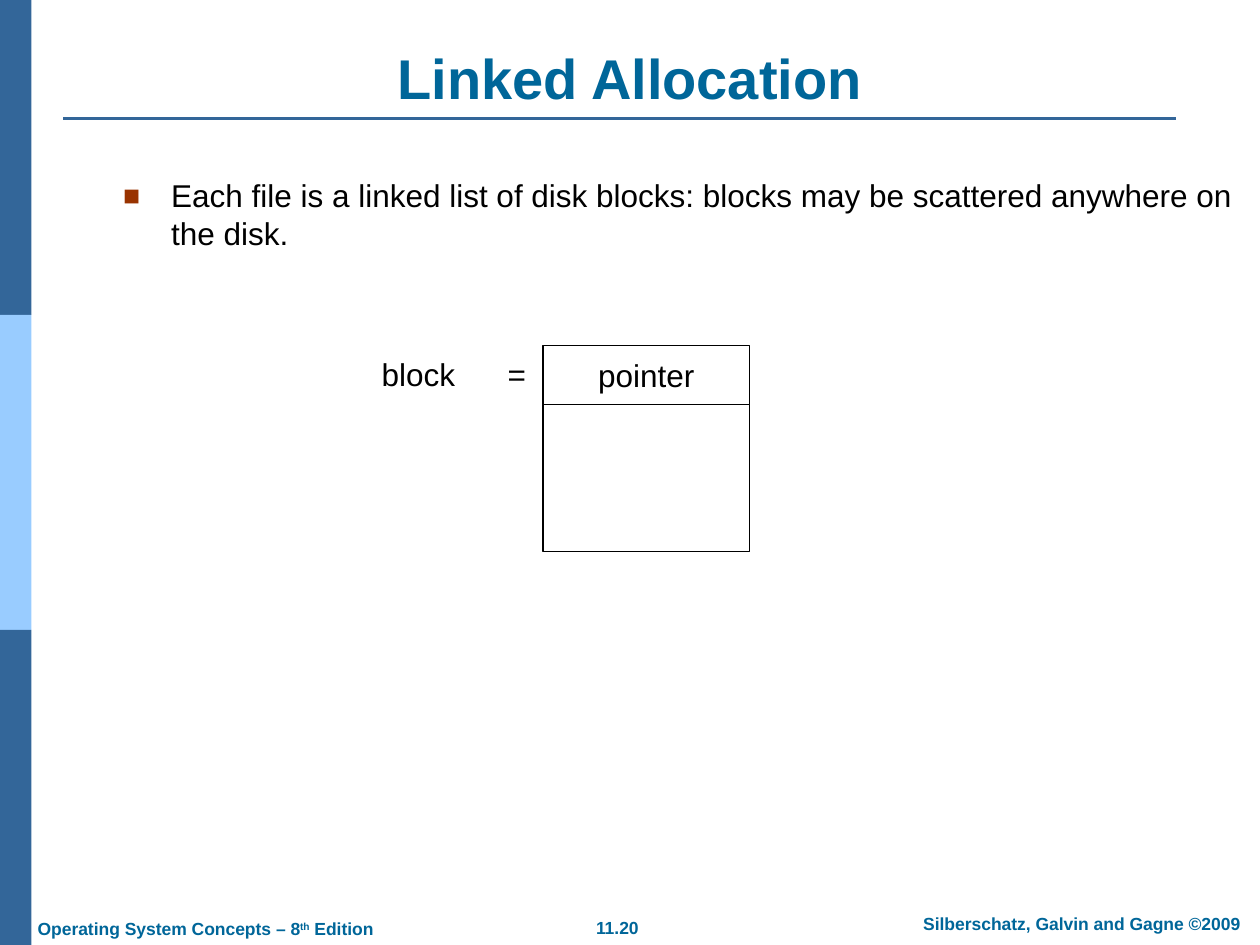
from dataclasses import dataclass

from lxml.etree import SubElement
from pptx import Presentation
from pptx.dml.color import RGBColor
from pptx.enum.shapes import MSO_CONNECTOR, MSO_SHAPE
from pptx.enum.text import MSO_ANCHOR as Anchor, PP_ALIGN as Align
from pptx.oxml.ns import qn
from pptx.util import Inches, Pt


@dataclass(frozen=True)
class Theme:
    font: str = "Arial"
    dark_blue: RGBColor = RGBColor(0x33, 0x66, 0x99)
    light_blue: RGBColor = RGBColor(0x99, 0xCC, 0xFF)
    heading: RGBColor = RGBColor(0x00, 0x66, 0x99)
    black: RGBColor = RGBColor(0, 0, 0)
    white: RGBColor = RGBColor(0xFF, 0xFF, 0xFF)
    bullet: str = "993300"
    title_size: Pt = Pt(32)
    body_size: Pt = Pt(18)
    footer_size: Pt = Pt(10)


theme = Theme()
presentation = Presentation()
presentation.slide_width, presentation.slide_height = Inches(10), Inches(7.5)
slide = presentation.slides.add_slide(presentation.slide_layouts[6])


def add_text(box, text, size, color, bold=False, align=Align.LEFT,
             anchor=Anchor.TOP, wrap=True):
    """Add a text box given as left, top, width, height in inches."""
    shape = slide.shapes.add_textbox(*map(Inches, box))
    frame = shape.text_frame
    frame.text = text
    frame.word_wrap = wrap
    frame.vertical_anchor = anchor
    paragraph = frame.paragraphs[0]
    paragraph.alignment = align
    for run in paragraph.runs:
        run.font.name, run.font.size = theme.font, size
        run.font.bold, run.font.color.rgb = bold, color
    return shape


def add_rectangle(box, fill, line=None):
    """Add a flat rectangle, outlined only when a line colour is given."""
    shape = slide.shapes.add_shape(MSO_SHAPE.RECTANGLE, *map(Inches, box))
    shape.shadow.inherit = False
    shape.fill.solid()
    shape.fill.fore_color.rgb = fill
    if line is None:
        shape.line.fill.background()
    else:
        shape.line.color.rgb = line
        shape.line.width = Pt(0.75)
    return shape


# Side band in three equal parts
band_height = 2.5
for index, color in enumerate((theme.dark_blue, theme.light_blue, theme.dark_blue)):
    add_rectangle((0, index * band_height, 0.25, band_height), color)

# Title and the rule under it
rule = slide.shapes.add_connector(
    MSO_CONNECTOR.STRAIGHT, Inches(0.5), Inches(0.94), Inches(9.33), Inches(0.94))
rule.line.color.rgb = theme.dark_blue
rule.line.width = Pt(1.5)
SubElement(rule._element.spPr, qn("a:effectLst"))
add_text((0.5, 0.3, 9, 0.63), "Linked Allocation", theme.title_size, theme.heading,
         bold=True, align=Align.CENTER, anchor=Anchor.BOTTOM)

# Footer
add_text((4.62, 7.23, 0.56, 0.27), "11.20", theme.footer_size, theme.heading,
         bold=True, align=Align.CENTER, wrap=False)
add_text((7.1, 7.2, 2.97, 0.27), "Silberschatz, Galvin and Gagne ©2009",
         theme.footer_size, theme.heading, bold=True, align=Align.CENTER)
edition = add_text((0.2, 7.24, 2.88, 0.27), "Operating System Concepts – 8",
                   theme.footer_size, theme.heading, bold=True, wrap=False)
for text, baseline in (("th", "30000"), (" Edition", "0")):
    run = edition.text_frame.paragraphs[0].add_run()
    run.text = text
    run.font.name, run.font.size = theme.font, theme.footer_size
    run.font.bold, run.font.color.rgb = True, theme.heading
    run.font._element.set("baseline", baseline)

# Bulleted statement
body = add_text(
    (0.88, 1.35, 9, 0.82),
    "Each file is a linked list of disk blocks: blocks may be scattered anywhere on the disk.",
    theme.body_size, theme.black)
body.text_frame.margin_right = Inches(0.05)
properties = body.text_frame.paragraphs[0]._p.get_or_add_pPr()
properties.set("marL", str(Inches(0.38)))
properties.set("indent", str(Inches(-0.38)))
bullet_color = SubElement(properties, qn("a:buClr"))
SubElement(bullet_color, qn("a:srgbClr"), val=theme.bullet)
SubElement(properties, qn("a:buSzPct"), val="90000")
SubElement(properties, qn("a:buFont"), typeface=theme.font)
SubElement(properties, qn("a:buChar"), char="■")

# Disk block: pointer field above the data field
block_left, block_top, block_width = 4.31, 2.74, 1.64
pointer_height, data_height = 0.47, 1.17
pointer = add_rectangle((block_left, block_top, block_width, pointer_height),
                        theme.white, theme.black)
add_rectangle((block_left, block_top + pointer_height, block_width, data_height),
              theme.white, theme.black)
pointer.text_frame.text = "pointer"
pointer.text_frame.word_wrap = False
pointer.text_frame.vertical_anchor = Anchor.MIDDLE
paragraph = pointer.text_frame.paragraphs[0]
paragraph.alignment = Align.CENTER
font = paragraph.runs[0].font
font.name, font.size, font.color.rgb = theme.font, theme.body_size, theme.black

# Block label, with a tab stop for the equals sign
label = add_text((2.93, 2.77, 1.35, 0.4), "block\t=", theme.body_size, theme.black,
                 anchor=Anchor.MIDDLE)
label.text_frame.margin_right = 0
tabs = SubElement(label.text_frame.paragraphs[0]._p.get_or_add_pPr(), qn("a:tabLst"))
SubElement(tabs, qn("a:tab"), pos=str(Inches(1)), algn="l")

presentation.save("out.pptx")
